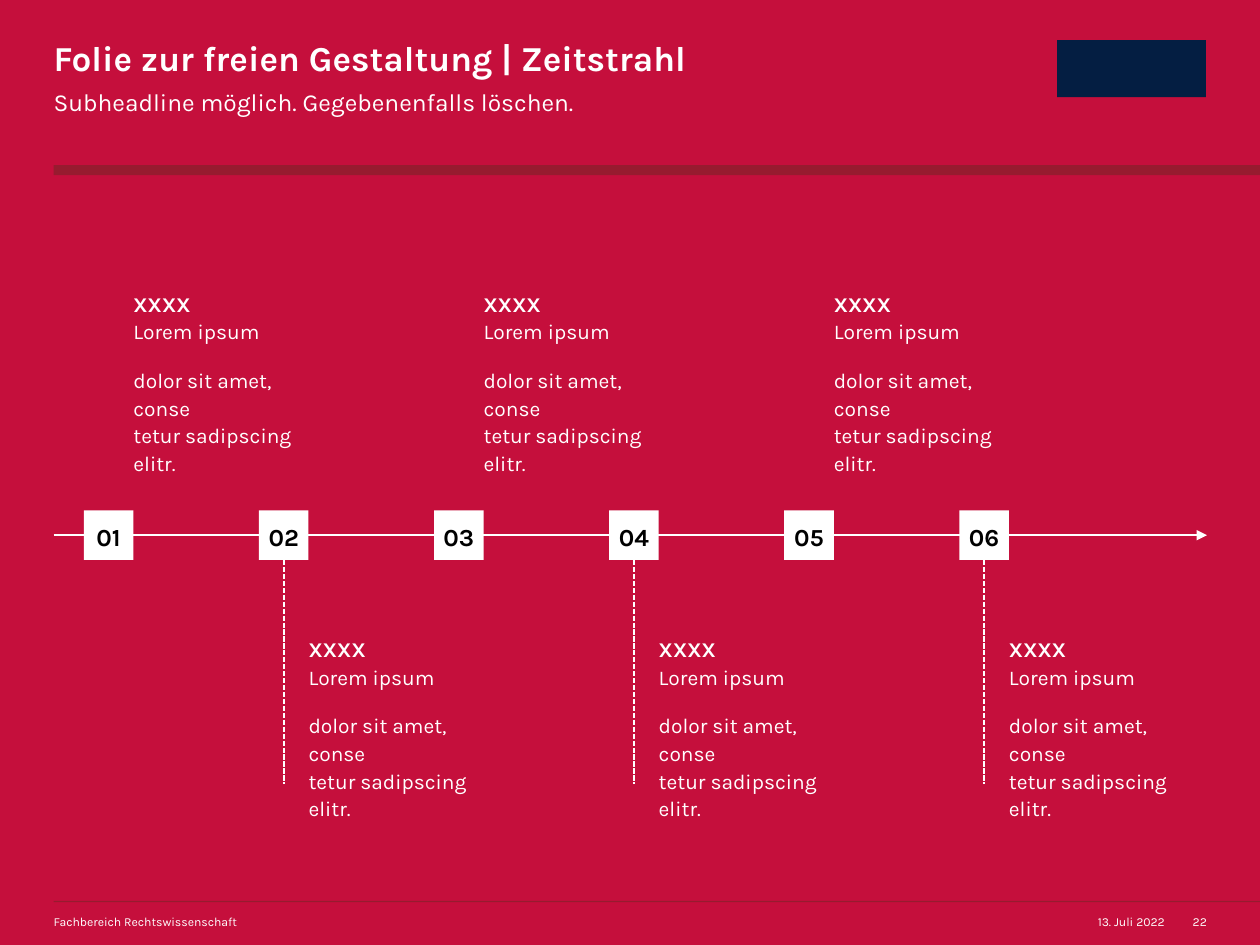
import lxml.etree
import pptx
import pptx.dml.color
import pptx.enum.dml
import pptx.enum.shapes
import pptx.enum.text
import pptx.oxml.ns
import pptx.util

Cm = pptx.util.Cm
Pt = pptx.util.Pt
RECTANGLE = pptx.enum.shapes.MSO_SHAPE.RECTANGLE
STRAIGHT = pptx.enum.shapes.MSO_CONNECTOR.STRAIGHT
ALIGN = pptx.enum.text.PP_ALIGN
qn = pptx.oxml.ns.qn


def colour(value):
    return pptx.dml.color.RGBColor.from_string(value)


def write(shape, paragraphs, size, value="FFFFFF", wrap=True, inset=0, **layout):
    frame = shape.text_frame
    frame_format = {"margin_left": 0, "margin_top": 0, "margin_right": Cm(inset),
                    "margin_bottom": 0, "word_wrap": wrap}
    for name, setting in frame_format.items():
        setattr(frame, name, setting)
    for index, runs in enumerate(paragraphs):
        paragraph = frame.add_paragraph() if index else frame.paragraphs[0]
        for name, setting in layout.items():
            setattr(paragraph, name, setting)
        for line, (wording, bold) in enumerate(runs):
            if line:
                paragraph.add_line_break()
            run = paragraph.add_run()
            run.text = wording
            run.font.color.rgb = colour(value)
            font_format = {"name": "Karla", "size": Pt(size), "bold": bold}
            for name, setting in font_format.items():
                setattr(run.font, name, setting)


deck = pptx.Presentation()
deck.slide_width, deck.slide_height = Cm(25.4), Cm(19.05)
slide = deck.slides.add_slide(deck.slide_layouts[6])
slide.background.fill.solid()
slide.background.fill.fore_color.rgb = colour("C50F3C")
shapes = slide.shapes

margin = 1.08
for left, top, width, height, value in [
    (margin, 18.16, 24.32, 0.03, "971B2F"),
    (margin, 3.33, 24.32, 0.2, "971B2F"),
    (21.31, 0.81, 3.0, 1.15, "041E42"),
]:
    band = shapes.add_shape(RECTANGLE, Cm(left), Cm(top), Cm(width), Cm(height))
    band.shadow.inherit = False
    band.fill.solid()
    band.fill.fore_color.rgb = colour(value)
    band.line.fill.background()

for wording, left, top, width, height, size, bold, layout in [
    ("Folie zur freien Gestaltung | Zeitstrahl", margin, 0.84, 14.25, 0.76, 20, True,
     {"line_spacing": 0.9}),
    ("Subheadline möglich. Gegebenenfalls löschen.", margin, 1.7, 14.25, 0.61, 14, False,
     {"line_spacing": 1.1, "space_after": Pt(8), "inset": 1}),
    ("Fachbereich Rechtswissenschaft", margin, 18.44, 11.4, 0.3, 7, False, {}),
    ("13. Juli 2022", 21.98, 18.44, 1.5, 0.3, 7, False,
     {"alignment": ALIGN.RIGHT, "wrap": False}),
    ("22", 24.03, 18.44, 0.3, 0.3, 7, False, {"alignment": ALIGN.RIGHT, "wrap": False}),
]:
    label = shapes.add_textbox(Cm(left), Cm(top), Cm(width), Cm(height))
    write(label, [[(wording, bold)]], size, **layout)

axis_y = 10.79
axis = shapes.add_connector(STRAIGHT, Cm(margin), Cm(axis_y), Cm(24.33), Cm(axis_y))
timeline_lines = [axis]
station_size, station_pitch = 1.0, 3.53
station_top = axis_y - station_size / 2
event = [
    [("XXXX", True), ("Lorem ipsum", False)],
    [("dolor sit amet, conse", False), ("tetur sadipscing elitr.", False)],
]
spacing = {"line_spacing": 1.1, "space_after": Pt(12)}

for index in range(6):
    left = 1.69 + index * station_pitch
    below = index % 2 == 1
    station = shapes.add_shape(RECTANGLE, Cm(left), Cm(station_top),
                               Cm(station_size), Cm(station_size))
    station.shadow.inherit = False
    station.fill.solid()
    station.fill.fore_color.rgb = colour("FFFFFF")
    station.line.fill.background()
    station.text_frame.vertical_anchor = pptx.enum.text.MSO_ANCHOR.MIDDLE
    write(station, [[(f"{index + 1:02}", True)]], 14, "000000",
          alignment=ALIGN.CENTER, **spacing)

    event_text = shapes.add_textbox(Cm(left + station_size), Cm(12.78 if below else 5.82),
                                    Cm(3.94), Cm(2.64))
    write(event_text, event, 12, wrap=False, **spacing)

    if below:
        middle = left + station_size / 2
        drop = shapes.add_connector(STRAIGHT, Cm(middle), Cm(station_top + station_size),
                                    Cm(middle), Cm(15.8))
        drop.begin_connect(station, 2)
        drop.line.dash_style = pptx.enum.dml.MSO_LINE.SQUARE_DOT
        timeline_lines.append(drop)

for stroke in timeline_lines:
    stroke.line.width = Pt(1)
    stroke.line.color.rgb = colour("FFFFFF")
    lxml.etree.SubElement(stroke._element.spPr, qn("a:effectLst"))
arrowhead = lxml.etree.SubElement(axis._element.spPr.find(qn("a:ln")), qn("a:tailEnd"))
arrowhead.set("type", "triangle")

deck.save("out.pptx")
